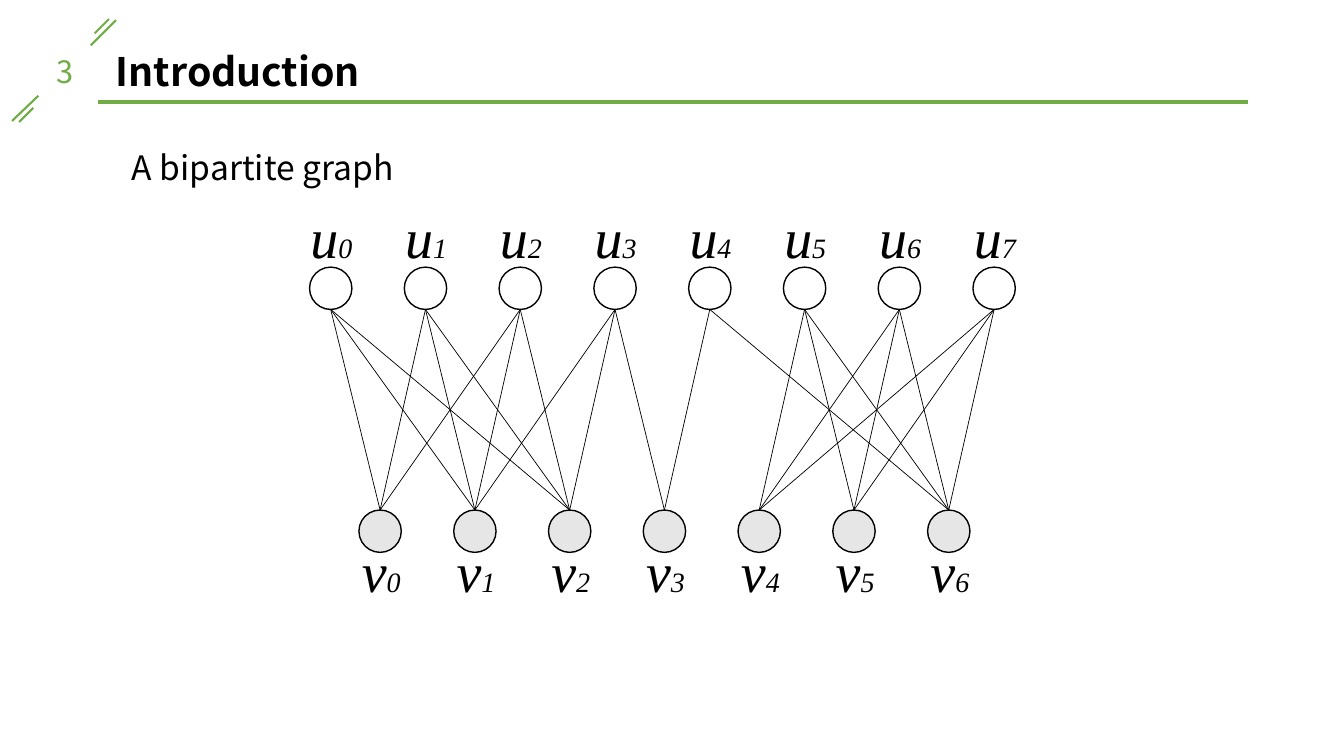
"""Build the Introduction slide with a bipartite graph."""
from lxml.etree import SubElement
from pptx import Presentation
from pptx.dml.color import RGBColor
from pptx.enum.shapes import MSO_CONNECTOR as Connector, MSO_SHAPE as Preset
from pptx.enum.text import MSO_ANCHOR as Anchor, MSO_AUTO_SIZE as AutoSize, PP_ALIGN as Align
from pptx.oxml.ns import qn
from pptx.util import Inches, Pt

TITLE = "Introduction"
SUBTITLE = "A bipartite graph"
PAGE = "3"
EDGES = {0: (0, 1, 2), 1: (0, 1, 2), 2: (0, 1, 2), 3: (1, 2, 3),
         4: (3, 6), 5: (4, 5, 6), 6: (4, 5, 6), 7: (4, 5, 6)}
ROWS = {
    "u": dict(count=8, left=3.07, top=2.65, fill="FFFFFF",
              label_top=1.96, label_width=0.62, label_shift=-0.09),
    "v": dict(count=7, left=3.56, top=5.06, fill="E7E6E6",
              label_top=5.27, label_width=0.59, label_shift=-0.07),
}
STEP, DIAMETER = 0.94, 0.42
ACCENTS = [((1.15, 0.2), (0.9, 0.45)), ((1.08, 0.19), (0.94, 0.33)),
           ((0.12, 1.2), (0.38, 0.95)), ((0.19, 1.21), (0.33, 1.07))]
RULE = ((0.97, 1.01), (12.38, 1.01))
SANS, SERIF = "Noto Sans CJK SC", "Times New Roman"
GREEN, BLACK = "70AD47", "000000"


def color(value):
    return RGBColor.from_string(value)


def add_run(paragraph, text, size, font, fill=BLACK, bold=False, italic=False):
    run = paragraph.add_run()
    run.text = text
    run.font.size, run.font.name = Pt(size), font
    run.font.bold, run.font.italic = bold, italic
    run.font.color.rgb = color(fill)


def add_text(slide, left, top, width, height, wrap=True):
    frame = slide.shapes.add_textbox(*map(Inches, (left, top, width, height))).text_frame
    frame.word_wrap = wrap
    return frame.paragraphs[0]


def add_line(slide, start, end, width, fill):
    line = slide.shapes.add_connector(Connector.STRAIGHT, *map(Inches, start + end))
    line.line.width = Pt(width)
    line.line.color.rgb = color(fill)
    SubElement(line._element.spPr, qn("a:effectLst"))
    return line


def add_heading(slide):
    paragraph = add_text(slide, 0.23, 0.47, 0.83, 0.47)
    paragraph.alignment = Align.CENTER
    add_run(paragraph, PAGE, 22, SANS, GREEN)
    for start, end in ACCENTS:
        add_line(slide, start, end, 1.5, GREEN)
    add_line(slide, *RULE, 2.5, GREEN)

    title = slide.shapes.title
    title.left, title.top, title.width, title.height = map(Inches, (1.15, 0.47, 11.22, 0.53))
    frame = title.text_frame
    frame.margin_left = 0
    frame.vertical_anchor = Anchor.MIDDLE
    frame.auto_size = AutoSize.NONE
    paragraph = frame.paragraphs[0]
    paragraph.alignment = Align.LEFT
    paragraph.line_spacing = 0.9
    add_run(paragraph, TITLE, 28, SANS, bold=True)

    paragraph = add_text(slide, 1.21, 1.21, 6.67, 0.65)
    paragraph.line_spacing = 1.5
    add_run(paragraph, SUBTITLE, 24, SANS)


def add_row(slide, letter, row):
    nodes = []
    for index in range(row["count"]):
        left = row["left"] + index * STEP
        node = slide.shapes.add_shape(
            Preset.OVAL, *map(Inches, (left, row["top"], DIAMETER, DIAMETER)))
        node.shadow.inherit = False
        node.fill.solid()
        node.fill.fore_color.rgb = color(row["fill"])
        node.line.color.rgb = color(BLACK)
        node.line.width = Pt(1)
        nodes.append(node)
        paragraph = add_text(slide, left + row["label_shift"], row["label_top"],
                             row["label_width"], 0.77, wrap=False)
        add_run(paragraph, letter, 40, SERIF, italic=True)
        add_run(paragraph, str(index), 20, SERIF, italic=True)
    return nodes


def add_edges(slide, lower_nodes):
    upper, lower = ROWS["u"], ROWS["v"]
    radius = DIAMETER / 2
    for source, targets in EDGES.items():
        start = (upper["left"] + source * STEP + radius, upper["top"] + DIAMETER)
        for target in targets:
            end = (lower["left"] + target * STEP + radius, lower["top"])
            edge = add_line(slide, start, end, 0.5, BLACK)
            edge.end_connect(lower_nodes[target], 0)


def main():
    presentation = Presentation()
    presentation.slide_width, presentation.slide_height = Inches(13.33), Inches(7.5)
    slide = presentation.slides.add_slide(presentation.slide_layouts[5])
    add_heading(slide)
    nodes = {letter: add_row(slide, letter, row) for letter, row in ROWS.items()}
    add_edges(slide, nodes["v"])
    presentation.save("out.pptx")


if __name__ == "__main__":
    main()
